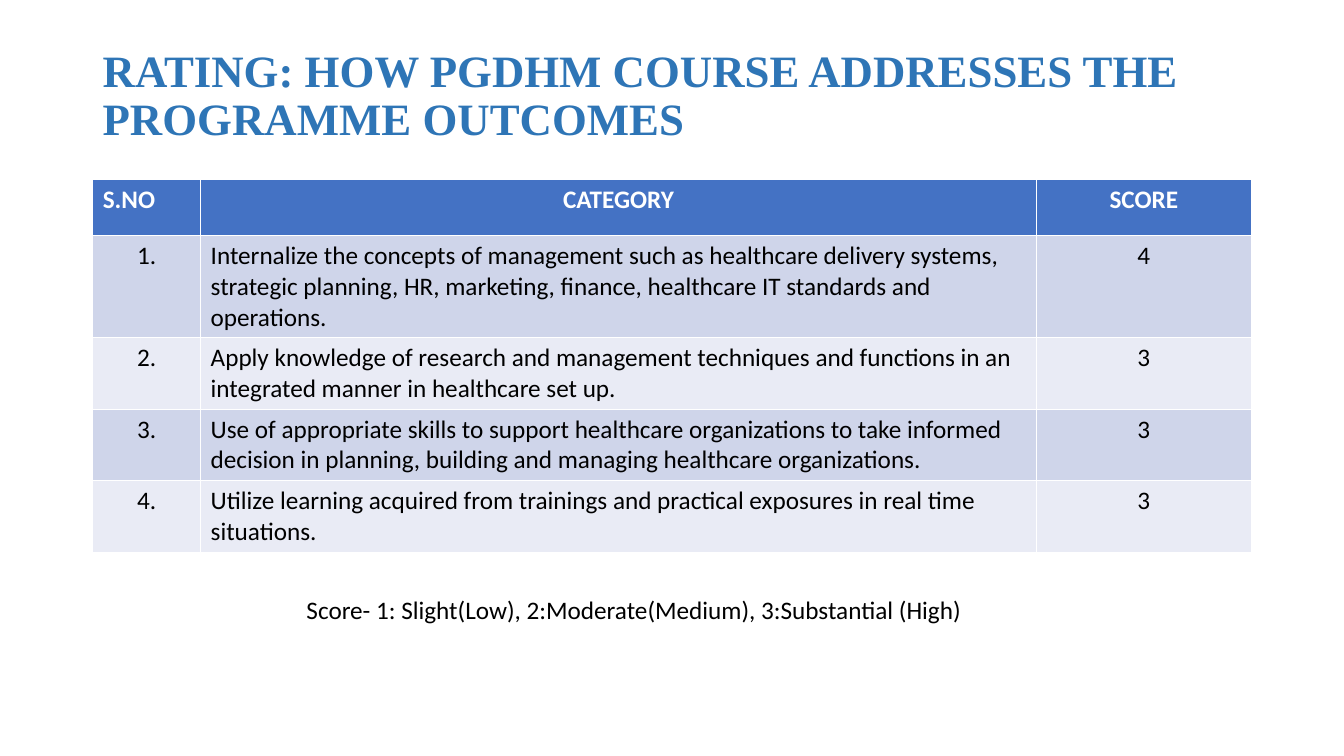
from pptx import Presentation
from pptx.dml.color import RGBColor
from pptx.enum.text import MSO_ANCHOR as Anchor, PP_ALIGN as Align
from pptx.util import Inches, Pt

TITLE = "RATING: HOW PGDHM COURSE ADDRESSES THE PROGRAMME OUTCOMES"
HEADINGS = ("S.NO", "CATEGORY", "SCORE")
OUTCOMES = [
    ("Internalize the concepts of management such as healthcare delivery systems, "
     "strategic planning, HR, marketing, finance, healthcare IT standards and operations.", 4),
    ("Apply knowledge of research and management techniques and functions "
     "in an integrated manner in healthcare set up.", 3),
    ("Use of appropriate skills to support healthcare organizations to take informed "
     "decision in planning, building and managing healthcare organizations.", 3),
    ("Utilize learning acquired from trainings and practical exposures "
     "in real time situations.", 3),
]
SCORE_KEY = "Score- 1: Slight(Low), 2:Moderate(Medium), 3:Substantial (High)"

COLORS = {
    "title": "2E75B6",
    "header": "4472C4",
    "header_text": "FFFFFF",
    "odd_row": "CFD5EA",
    "even_row": "E9EBF5",
    "text": "000000",
}
LEFT, WIDTH = 0.92, 11.5
COLUMN_WIDTHS = (1.07, 8.29, 2.13)
ROW_HEIGHTS = (0.56, 1.01, 0.71, 0.71, 0.71)
HEADING_ALIGNS = (Align.LEFT, Align.CENTER, Align.CENTER)
OUTCOME_ALIGNS = (Align.CENTER, Align.LEFT, Align.CENTER)


def write(frame, text, color, size=18, font="Calibri", bold=False, align=Align.LEFT):
    frame.word_wrap = True
    paragraph = frame.paragraphs[0]
    paragraph.text = text
    paragraph.alignment = align
    paragraph.font.name = font
    paragraph.font.size = Pt(size)
    paragraph.font.bold = bold
    paragraph.font.color.rgb = RGBColor.from_string(COLORS[color])
    return paragraph


def add_text_frame(slide, top, height):
    return slide.shapes.add_textbox(
        Inches(LEFT), Inches(top), Inches(WIDTH), Inches(height)).text_frame


def add_ratings(slide):
    rows = [HEADINGS] + [
        (f"{number}.", outcome, str(score))
        for number, (outcome, score) in enumerate(OUTCOMES, 1)
    ]
    ratings = slide.shapes.add_table(
        len(rows), len(HEADINGS), Inches(LEFT), Inches(1.78),
        Inches(WIDTH), Inches(sum(ROW_HEIGHTS))).table
    for column, width in zip(ratings.columns, COLUMN_WIDTHS):
        column.width = Inches(width)
    for r, (values, height) in enumerate(zip(rows, ROW_HEIGHTS)):
        ratings.rows[r].height = Inches(height)
        is_header = r == 0
        fill = "header" if is_header else "odd_row" if r % 2 else "even_row"
        color = "header_text" if is_header else "text"
        aligns = HEADING_ALIGNS if is_header else OUTCOME_ALIGNS
        for c, (value, align) in enumerate(zip(values, aligns)):
            cell = ratings.cell(r, c)
            cell.fill.solid()
            cell.fill.fore_color.rgb = RGBColor.from_string(COLORS[fill])
            write(cell.text_frame, value, color, bold=is_header, align=align)


def main():
    deck = Presentation()
    deck.slide_width, deck.slide_height = Inches(13.33), Inches(7.5)
    slide = deck.slides.add_slide(deck.slide_layouts[6])

    title = add_text_frame(slide, 0.4, 1.13)
    title.vertical_anchor = Anchor.MIDDLE
    write(title, TITLE, "title", 32, "Times New Roman", True).line_spacing = 0.9

    add_ratings(slide)

    score_key = add_text_frame(slide, 5.85, 0.4)
    score_key.margin_left = Inches(2.12)
    write(score_key, SCORE_KEY, "text")

    deck.save("out.pptx")


if __name__ == "__main__":
    main()
